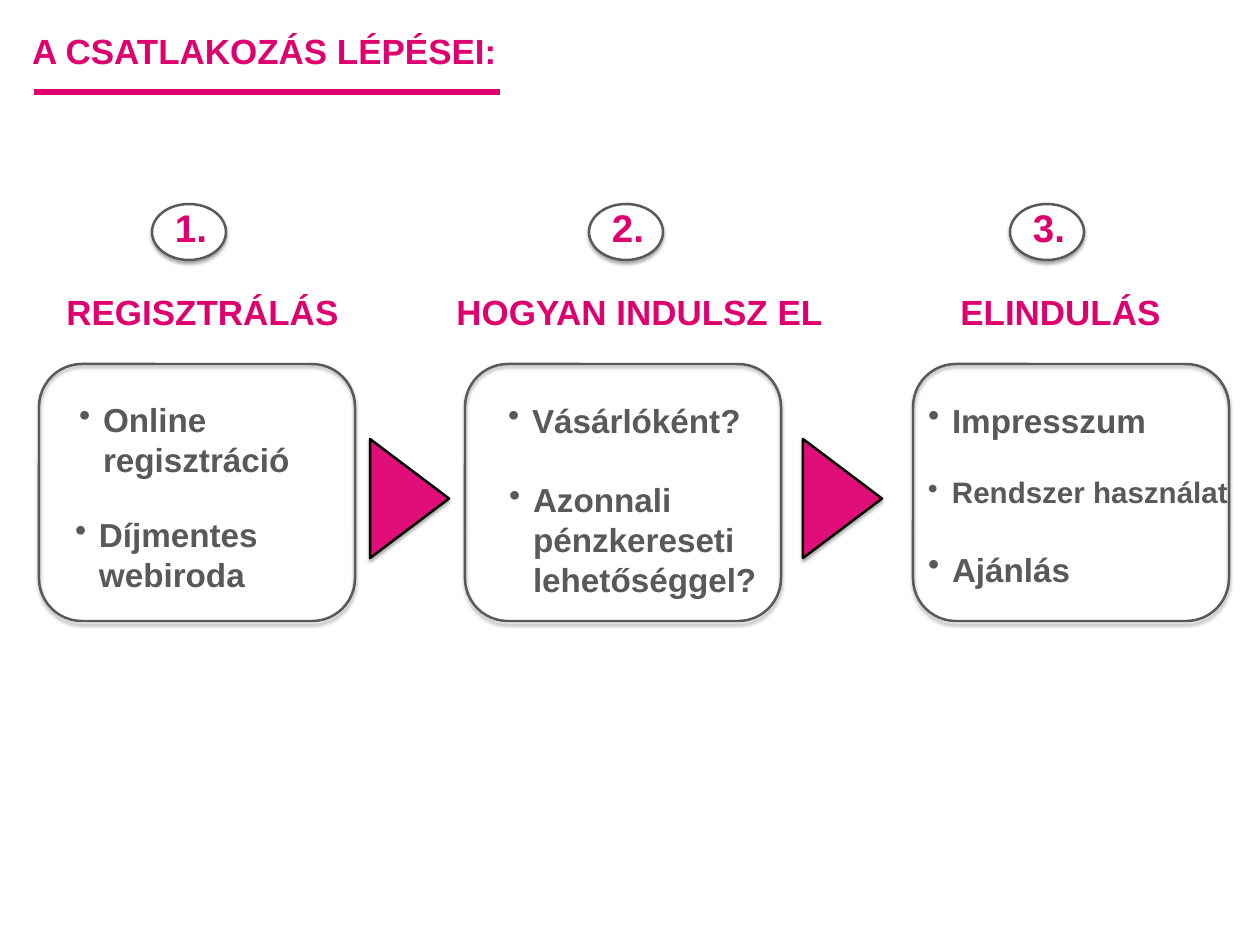
import pptx
import pptx.dml.color
import pptx.enum.shapes
import pptx.enum.text
import pptx.oxml
import pptx.oxml.ns
import pptx.util

PX = 10320
PINK, GREY, BLACK, WHITE, ARROW_PINK = "DE006E", "595959", "000000", "FFFFFF", "E10E79"
SHAPES = pptx.enum.shapes.MSO_SHAPE
ALIGN = pptx.enum.text.PP_ALIGN
ANCHOR = pptx.enum.text.MSO_ANCHOR
SHADOW = (
    '<a:outerShdw %s blurRad="38100" dist="22860" dir="5400000" rotWithShape="0">'
    '<a:srgbClr val="000000"><a:alpha val="35000"/></a:srgbClr></a:outerShdw>'
    % pptx.oxml.ns.nsdecls("a")
)


def color(value):
    return pptx.dml.color.RGBColor.from_string(value)


def px(*values):
    return [value * PX for value in values]


def set_values(target, values):
    for name, value in values.items():
        setattr(target, name, value)


class StepSlide:
    """Draws styled elements on one slide, with lengths in px."""

    def __init__(self, slide, font_name):
        self.slide = slide
        self.font_name = font_name

    def line(self, x1, y1, x2, y2, width):
        connector = self.slide.shapes.add_connector(
            pptx.enum.shapes.MSO_CONNECTOR.STRAIGHT, *px(x1, y1, x2, y2))
        connector.line.color.rgb = color(PINK)
        connector.line.width = pptx.util.Pt(width)
        properties = connector._element.spPr
        properties.append(properties.makeelement(pptx.oxml.ns.qn("a:effectLst"), {}))

    def shape(self, kind, box, outline, fill=None):
        shape = self.slide.shapes.add_shape(kind, *px(*box))
        if fill:
            shape.fill.solid()
            shape.fill.fore_color.rgb = color(fill)
        else:
            shape.fill.background()
        shape.line.color.rgb = color(outline)
        shape.line.width = pptx.util.Pt(2)
        shape.shadow.inherit = False
        effects = shape._element.spPr.find(pptx.oxml.ns.qn("a:effectLst"))
        effects.append(pptx.oxml.parse_xml(SHADOW))
        return shape

    def arrow(self, box):
        arrow = self.shape(SHAPES.DOWN_ARROW, box, BLACK, ARROW_PINK)
        arrow.adjustments[0] = 0.5
        arrow.adjustments[1] = 1
        arrow.rotation = 270

    def text(self, text, box, size, ink=PINK, inset=7, wrap=True,
             anchor=ANCHOR.MIDDLE, align=ALIGN.LEFT, bullet=False):
        frame = self.slide.shapes.add_textbox(*px(*box)).text_frame
        sides = ("left", "top", "right", "bottom")
        set_values(frame, {f"margin_{side}": inset * PX for side in sides})
        set_values(frame, {
            "word_wrap": wrap,
            "vertical_anchor": anchor,
            "auto_size": pptx.enum.text.MSO_AUTO_SIZE.SHAPE_TO_FIT_TEXT,
        })
        paragraph = frame.paragraphs[0]
        paragraph.alignment = align
        if bullet:
            properties = paragraph._p.get_or_add_pPr()
            properties.set("marL", str(24 * PX))
            properties.set("indent", str(-24 * PX))
            properties.append(
                properties.makeelement(pptx.oxml.ns.qn("a:buChar"), {"char": "•"}))
        run = paragraph.add_run()
        run.text = text
        set_values(run.font, {
            "name": self.font_name, "size": pptx.util.Pt(size), "bold": True})
        run.font.color.rgb = color(ink)

    def step(self, number, heading, badge_left, box_left, bullets):
        self.shape(SHAPES.OVAL, (badge_left, 204, 74, 56), GREY, WHITE)
        self.text(f"{number}.", (badge_left + 17, 198, 45, 59), 31.3,
                  inset=6, wrap=False, anchor=ANCHOR.TOP)
        self.text(heading, (badge_left - 153, 283, 407, 57), 28.4, align=ALIGN.CENTER)
        self.shape(SHAPES.ROUNDED_RECTANGLE, (box_left, 364, 316, 257), GREY)
        for text, box, size in bullets:
            self.text(text, box, size, ink=GREY, bullet=True)


STEPS = [
    ("REGISZTRÁLÁS", 152, 39, [
        ("Online regisztráció", (72, 392, 295, 95), 27),
        ("Díjmentes webiroda", (68, 507, 317, 95), 27),
    ]),
    ("HOGYAN INDULSZ EL", 589, 465, [
        ("Vásárlóként?", (501, 393, 295, 54), 27),
        ("Azonnali pénzkereseti lehetőséggel?", (502, 472, 295, 135), 27),
    ]),
    ("ELINDULÁS", 1010, 913, [
        ("Impresszum", (921, 393, 295, 54), 27),
        ("Rendszer használat", (921, 467, 339, 50), 24),
        ("Ajánlás", (921, 542, 295, 54), 27),
    ]),
]


def main():
    presentation = pptx.Presentation()
    presentation.slide_width, presentation.slide_height = px(1260, 945)
    slide = presentation.slides.add_slide(presentation.slide_layouts[6])
    steps = StepSlide(slide, "Arial")
    steps.line(34, 92, 500, 92, 4.5)
    steps.text("A CSATLAKOZÁS LÉPÉSEI:", (28, 26, 641, 51), 28.4,
               inset=4, anchor=ANCHOR.TOP)
    for number, step in enumerate(STEPS, 1):
        steps.step(number, *step)
    for left in (350, 783):
        steps.arrow((left, 459, 119, 79))
    presentation.save("out.pptx")


if __name__ == "__main__":
    main()
